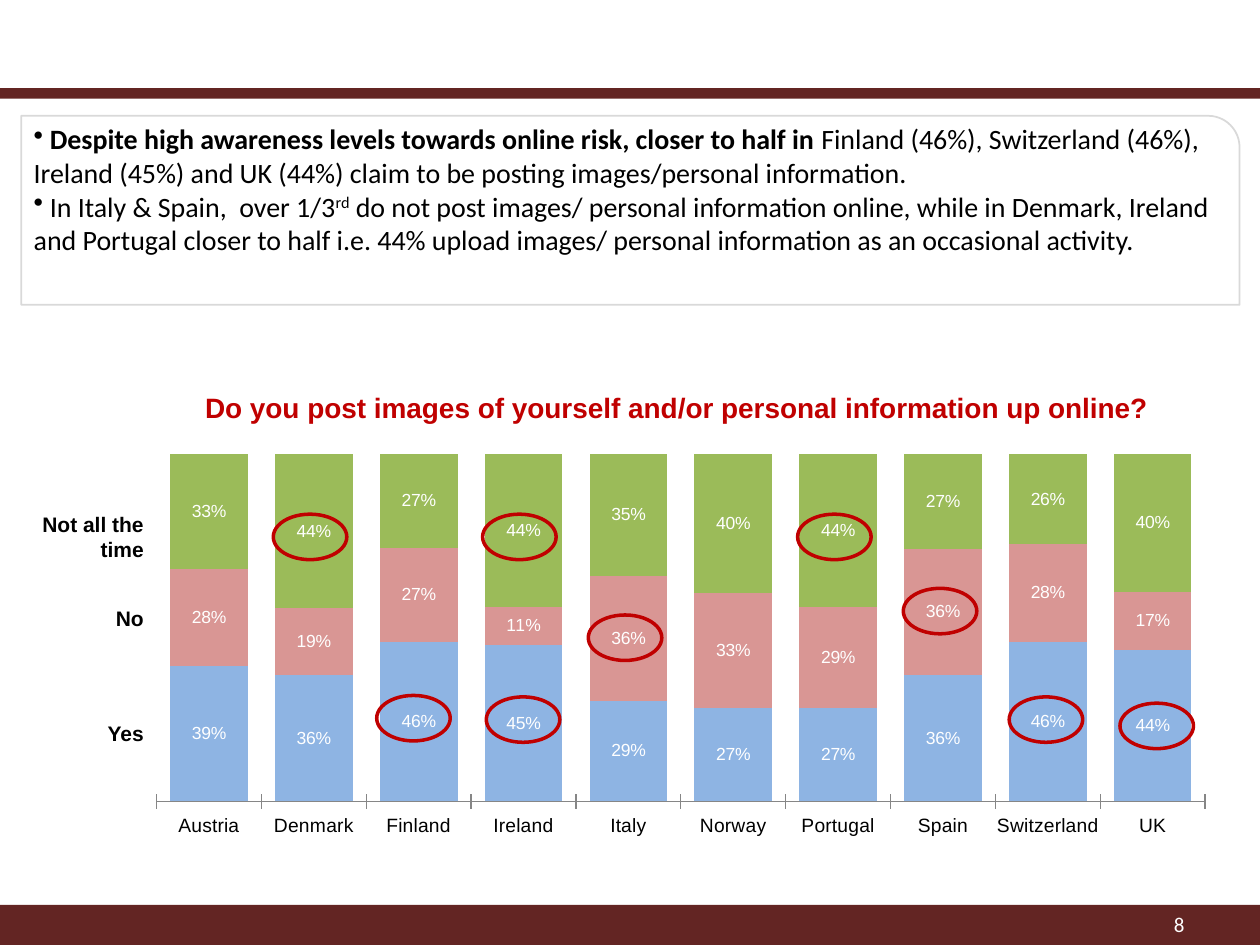
from pptx import Presentation
from pptx.chart.data import CategoryChartData
from pptx.dml.color import RGBColor
from pptx.enum.chart import XL_CHART_TYPE, XL_LABEL_POSITION, XL_TICK_MARK
from pptx.enum.shapes import MSO_SHAPE
from pptx.enum.text import MSO_ANCHOR, MSO_AUTO_SIZE, PP_ALIGN
from pptx.oxml import parse_xml
from pptx.oxml.ns import nsdecls
from pptx.util import Pt

STACKED = XL_CHART_TYPE.COLUMN_STACKED_100
CENTER_LABEL = XL_LABEL_POSITION.CENTER
CROSS = XL_TICK_MARK.CROSS
RECTANGLE, OVAL = MSO_SHAPE.RECTANGLE, MSO_SHAPE.OVAL
ROUND_ONE = MSO_SHAPE.ROUND_1_RECTANGLE
TOP, MIDDLE = MSO_ANCHOR.TOP, MSO_ANCHOR.MIDDLE
NO_FIT = MSO_AUTO_SIZE.NONE
LEFT, CENTER, RIGHT = PP_ALIGN.LEFT, PP_ALIGN.CENTER, PP_ALIGN.RIGHT

MAROON, RED, BLACK, WHITE = "632523", "C00000", "000000", "FFFFFF"
COUNTRIES = ["Austria", "Denmark", "Finland", "Ireland", "Italy", "Norway",
             "Portugal", "Spain", "Switzerland", "UK"]
ANSWERS = [
    ("Series 1", "8EB4E3", [39, 36, 46, 45, 29, 27, 27, 36, 46, 44]),
    ("Series 2", "D99694", [28, 19, 27, 11, 36, 33, 29, 36, 28, 17]),
    ("Series 3", "9BBB59", [33, 44, 27, 44, 35, 40, 44, 27, 26, 40]),
]
ANSWER_LABELS = [("Yes", 408.2, 21.6), ("No", 342.7, 21.6),
                 ("Not all the time", 288.7, 36)]
HIGHLIGHTS = [(640, 401.8), (215.3, 397.4), (576.7, 398.2), (516.2, 336.2),
              (277.9, 398.2), (156.2, 293.8), (455.8, 293.8), (336.2, 351.4),
              (275.8, 293.8)]
FINDINGS = [
    [(" Despite high awareness levels towards online risk, closer to half in ",
      {"bold": True}),
     ("Finland (46%), Switzerland (46%), Ireland (45%) and UK (44%) claim to be "
      "posting images/personal information.", {})],
    [(" In Italy & Spain,  over 1/3", {}),
     ("rd", {"raised": True}),
     (" do not post images/ personal information online, while in Denmark, "
      "Ireland and Portugal closer to half i.e. 44% upload images/ personal "
      "information as an occasional activity.", {})],
]


def color(value):
    return RGBColor.from_string(value)


def format_font(font, size, fill, name="Arial", bold=False):
    font.size = Pt(size)
    font.name = name
    font.bold = bold
    font.color.rgb = color(fill)


def add_span(para, text, size=12, fill=BLACK, name="Arial", bold=False, raised=False):
    span = para.add_run()
    span.text = text
    format_font(span.font, size, fill, name, bold)
    if raised:
        span._r.get_or_add_rPr().set("baseline", "30000")


def set_frame(frame, anchor):
    frame.word_wrap = True
    frame.auto_size = NO_FIT
    frame.vertical_anchor = anchor


def add_shape(page, kind, left, top, width, height, fill=None, line=None, weight=1):
    shape = page.shapes.add_shape(kind, Pt(left), Pt(top), Pt(width), Pt(height))
    shape.shadow.inherit = False
    if fill:
        shape.fill.solid()
        shape.fill.fore_color.rgb = color(fill)
    else:
        shape.fill.background()
    if line:
        shape.line.color.rgb = color(line)
        shape.line.width = Pt(weight)
    else:
        shape.line.fill.background()
    return shape


def add_label(page, text, left, top, width, height, **style):
    box = page.shapes.add_textbox(Pt(left), Pt(top), Pt(width), Pt(height))
    set_frame(box.text_frame, MIDDLE)
    para = box.text_frame.paragraphs[0]
    para.alignment = RIGHT
    add_span(para, text, **style)


def place_title(page, text):
    title = page.shapes.title
    title.left, title.top, title.width, title.height = (
        Pt(95.8), Pt(219.6), Pt(581.8), Pt(26.6))
    set_frame(title.text_frame, TOP)
    para = title.text_frame.paragraphs[0]
    para.alignment = CENTER
    add_span(para, text, size=16, fill=RED, bold=True)


def add_findings(page):
    box = add_shape(page, ROUND_ONE, 12.2, 66.2, 696.2, 108, line="D9D9D9")
    frame = box.text_frame
    set_frame(frame, TOP)
    for index, spans in enumerate(FINDINGS):
        para = frame.add_paragraph() if index else frame.paragraphs[0]
        para.alignment = LEFT
        para._p.get_or_add_pPr().append(
            parse_xml(f'<a:buChar {nsdecls("a")} char="•"/>'))
        for text, style in spans:
            add_span(para, text, size=16, name="Calibri", **style)


def set_plot_area(chart, **fractions):
    parts = "".join(f'<c:{key} val="{value}"/>' for key, value in fractions.items())
    layout = parse_xml(
        f'<c:layout {nsdecls("c")}><c:manualLayout><c:layoutTarget val="inner"/>'
        f'<c:xMode val="edge"/><c:yMode val="edge"/>{parts}'
        "</c:manualLayout></c:layout>")
    plot_area = chart._chartSpace.chart.plotArea
    for old in plot_area.findall(layout.tag):
        plot_area.remove(old)
    plot_area.insert(0, layout)


def add_answer_chart(page):
    data = CategoryChartData(number_format="0%")
    data.categories = COUNTRIES
    for name, _, percents in ANSWERS:
        data.add_series(name, [percent / 100 for percent in percents])
    chart = page.shapes.add_chart(
        STACKED, Pt(77), Pt(254.9), Pt(624.2), Pt(228.2), data).chart
    chart.has_title = False
    chart.has_legend = False
    format_font(chart.font, 12, BLACK)
    chart.value_axis.visible = False
    chart.value_axis.has_major_gridlines = False
    chart.value_axis.maximum_scale = 1
    axis = chart.category_axis
    axis.major_tick_mark = CROSS
    axis.format.line.color.rgb = color("868686")
    format_font(axis.tick_labels.font, 11, BLACK)
    plot = chart.plots[0]
    plot.gap_width = 35
    plot.overlap = 100
    plot.vary_by_categories = False
    for series, (_, fill, _) in zip(plot.series, ANSWERS):
        series.format.fill.solid()
        series.format.fill.fore_color.rgb = color(fill)
        labels = series.data_labels
        labels.show_value = True
        labels.number_format = "0%"
        labels.number_format_is_linked = False
        labels.position = CENTER_LABEL
        format_font(labels.font, 10, WHITE)
    set_plot_area(chart, x=0.02, y=0.02, w=0.96, h=0.87)


def main():
    deck = Presentation()
    deck.slide_width, deck.slide_height = Pt(720), Pt(540)
    page = deck.slides.add_slide(deck.slide_layouts[5])
    for top, height in [(517, 23), (50.4, 6)]:
        add_shape(page, RECTANGLE, 0, top, 720, height, fill=MAROON)
    place_title(page, "Do you post images of yourself and/or personal "
                      "information up online?")
    add_answer_chart(page)
    add_label(page, "8", 516.2, 513.4, 167.8, 28.8, fill=WHITE, name="Calibri")
    add_findings(page)
    for text, top, height in ANSWER_LABELS:
        add_label(page, text, -0.7, top, 90, height, bold=True)
    for left, top in HIGHLIGHTS:
        add_shape(page, OVAL, left, top, 42, 26, line=RED, weight=2)
    deck.save("out.pptx")


if __name__ == "__main__":
    main()
